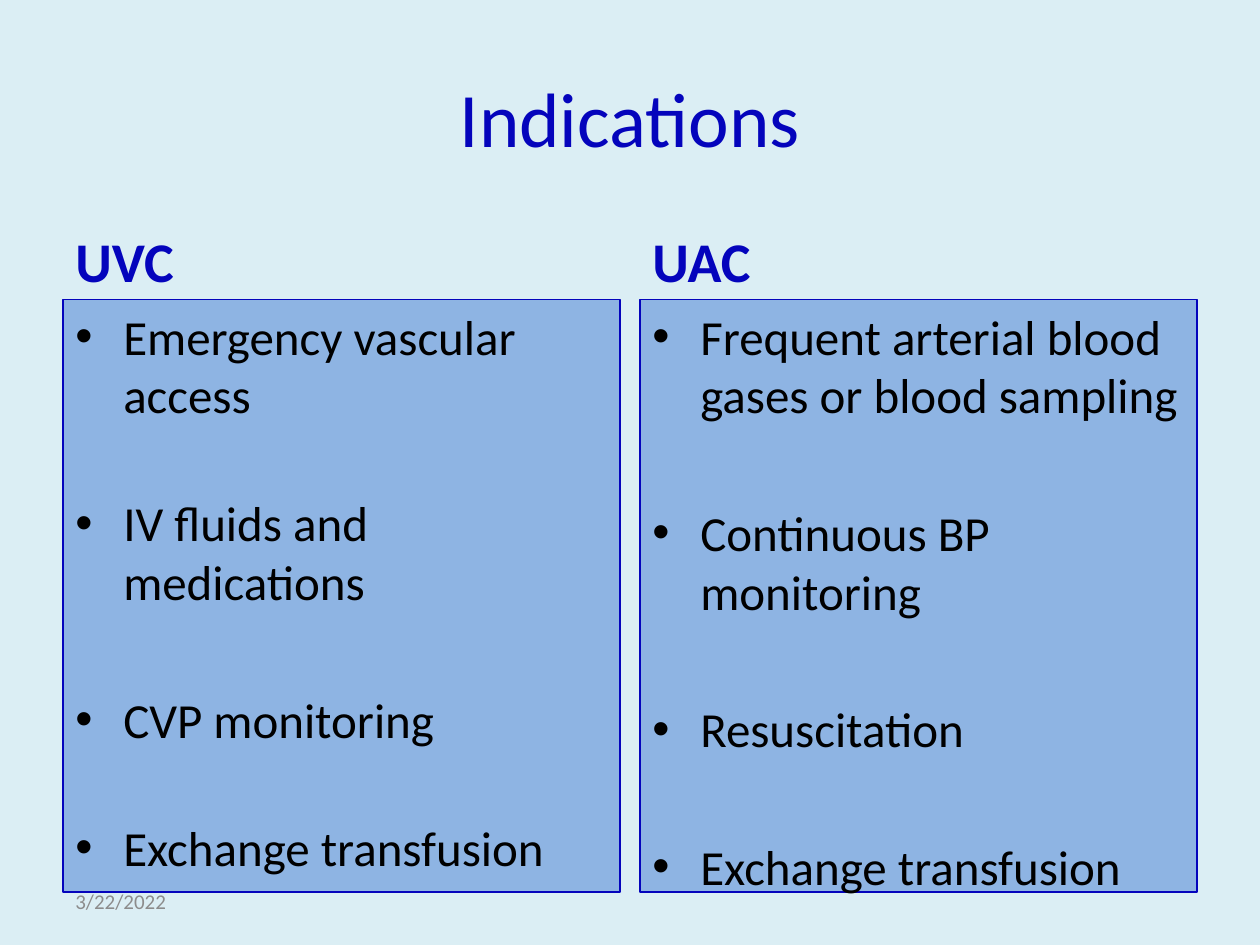
import pptx
import pptx.dml.color
import pptx.enum.shapes
import pptx.enum.text
import pptx.oxml
import pptx.oxml.ns
import pptx.util
import lxml.etree

Inches = pptx.util.Inches
Pt = pptx.util.Pt
ALIGN = pptx.enum.text.PP_ALIGN
ANCHOR = pptx.enum.text.MSO_ANCHOR

COLORS = {"back": "DBEEF4", "blue": "0404BC", "panel": "8EB4E3",
          "text": "000000", "date": "8C8C8C"}

# Space before a bullet, in points
NEAR, FAR = 39.5, 45

# Heading, then bullets with the space before each
COLUMNS = [
    ("UVC", [("Emergency vascular access", 0),
             ("IV fluids and medications", NEAR),
             ("CVP monitoring", FAR),
             ("Exchange transfusion", NEAR)]),
    ("UAC", [("Frequent arterial blood gases or blood sampling", 0),
             ("Continuous BP monitoring", FAR),
             ("Resuscitation", FAR),
             ("Exchange transfusion", FAR)]),
]


def color(name):
    return pptx.dml.color.RGBColor.from_string(COLORS[name])


class Page:
    font = "Calibri"

    def __init__(self, deck):
        self.slide = deck.slides.add_slide(deck.slide_layouts[6])
        fill = self.slide.background.fill
        fill.solid()
        fill.fore_color.rgb = color("back")

    def run(self, para, text, size, tint, bold=False):
        run = para.add_run()
        run.text = text
        run.font.name = self.font
        run.font.size = Pt(size)
        run.font.bold = bold
        run.font.color.rgb = color(tint)

    def label(self, box, text, size, tint, anchor=ANCHOR.MIDDLE,
              align=ALIGN.LEFT, bold=False):
        frame = self.slide.shapes.add_textbox(*map(Inches, box)).text_frame
        frame.word_wrap = True
        frame.vertical_anchor = anchor
        para = frame.paragraphs[0]
        para.alignment = align
        self.run(para, text, size, tint, bold)

    def bullet(self, para):
        props = para._p.get_or_add_pPr()
        props.set("marL", str(Inches(0.38)))
        props.set("indent", str(-Inches(0.38)))
        for tag, key, value in (("a:buFont", "typeface", "Arial"),
                                ("a:buChar", "char", "•")):
            node = lxml.etree.SubElement(props, pptx.oxml.ns.qn(tag))
            node.set(key, value)

    def panel(self, box, items):
        shape = self.slide.shapes.add_shape(
            pptx.enum.shapes.MSO_SHAPE.RECTANGLE, *map(Inches, box))
        shape.shadow.inherit = False
        shape.fill.solid()
        shape.fill.fore_color.rgb = color("panel")
        shape.line.color.rgb = color("blue")
        shape.line.width = Pt(0.75)
        frame = shape.text_frame
        frame.word_wrap = True
        frame.vertical_anchor = ANCHOR.TOP
        for i, (text, space) in enumerate(items):
            para = frame.add_paragraph() if i else frame.paragraphs[0]
            self.bullet(para)
            para.alignment = ALIGN.LEFT
            para.space_before = Pt(space)
            self.run(para, text, 28, "text")


def main():
    deck = pptx.Presentation()
    deck.slide_width, deck.slide_height = Inches(10), Inches(7.5)
    page = Page(deck)

    # Title
    page.label((0.5, 0.3, 9, 1.25), "Indications", 44, "blue",
               align=ALIGN.CENTER)

    # Two columns: heading above a bullet panel
    left, width, gap = 0.5, 4.42, 0.16
    for i, (head, items) in enumerate(COLUMNS):
        x = left + i * (width + gap)
        page.label((x, 1.68, width, 0.7), head, 32, "blue",
                   anchor=ANCHOR.BOTTOM, bold=True)
        page.panel((x, 2.38, width, 4.7), items)

    # Date
    page.label((left, 6.95, 2.33, 0.4), "3/22/2022", 12, "date")

    deck.save("out.pptx")


if __name__ == "__main__":
    main()
